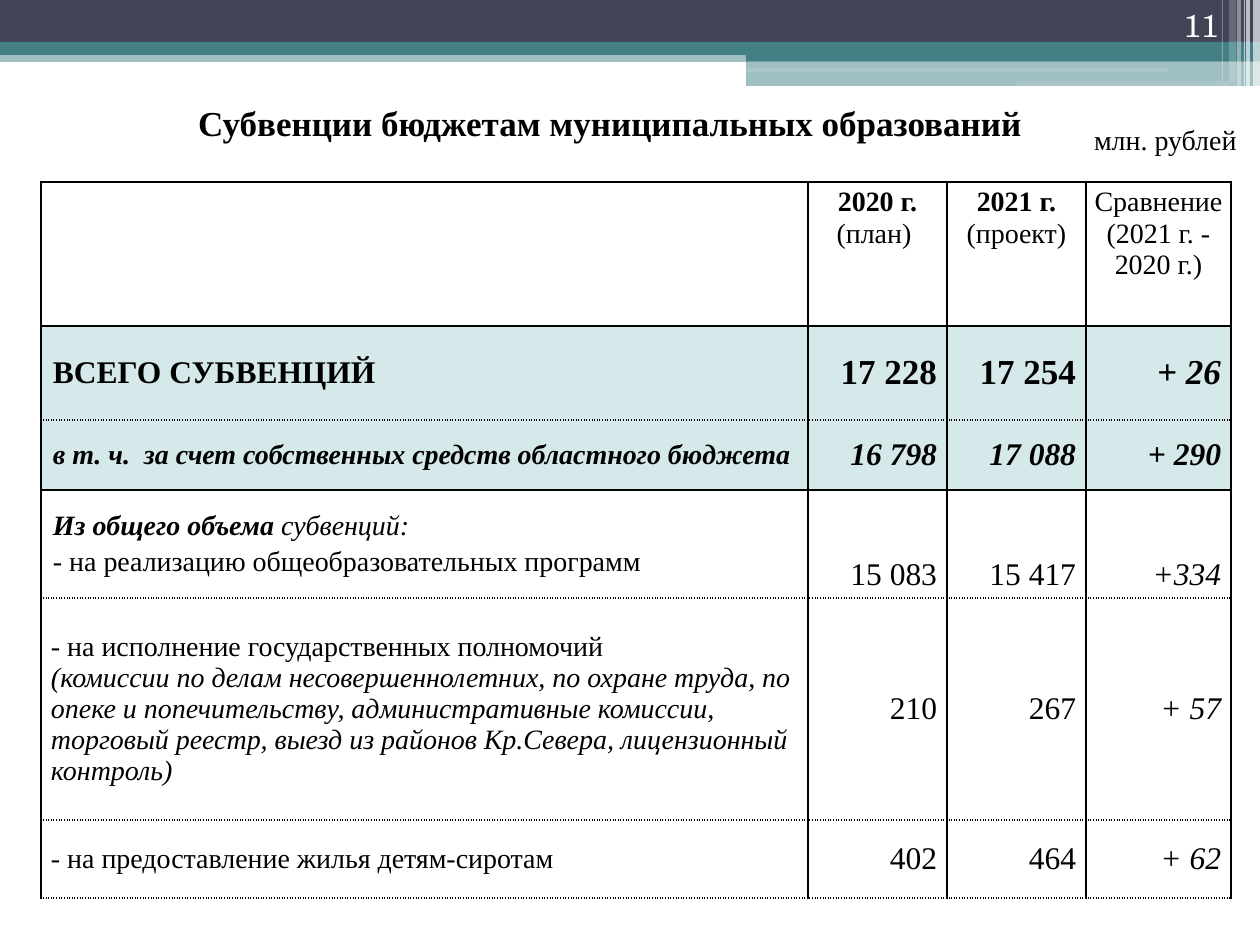
from lxml import etree
from pptx import Presentation
from pptx.dml.color import RGBColor
from pptx.enum.shapes import MSO_SHAPE
from pptx.enum.text import MSO_ANCHOR, PP_ALIGN
from pptx.oxml.ns import qn
from pptx.util import Pt

RECT, ROUND = MSO_SHAPE.RECTANGLE, MSO_SHAPE.ROUNDED_RECTANGLE
TOP, MID, LOW = MSO_ANCHOR.TOP, MSO_ANCHOR.MIDDLE, MSO_ANCHOR.BOTTOM
LEFT, MIDST, RIGHT = PP_ALIGN.LEFT, PP_ALIGN.CENTER, PP_ALIGN.RIGHT

SCALE = 914400 / 126
SERIF = "Times New Roman"
HUES = {"ink": "000000", "white": "FFFFFF", "navy": "424456",
        "teal": "438086", "pale": "D6E9EA"}

BARS = [
    (RECT, (0, 50, 1260, 12), "teal", 50),
    (RECT, (0, 0, 1260, 42), "navy", 100),
    (RECT, (0, 42, 1260, 13), "teal", 100),
    (RECT, (746, 49, 514, 12), "teal", 100),
    (RECT, (746, 61, 514, 25), "teal", 50),
    (ROUND, (745, 68, 422, 4), "white", 11),
    (ROUND, (1016, 81, 220, 5), "white", 11),
    (RECT, (1253, 0, 7, 86), "white", 65),
    (RECT, (1246, 0, 4, 86), "white", 65),
    (RECT, (1244, 0, 1, 86), "white", 60),
    (RECT, (1237, 0, 4, 86), "white", 40),
    (RECT, (1229, 0, 7, 81), "white", 20),
    (RECT, (1222, 0, 1, 81), "white", 30),
]

COLS = [767, 139, 139, 145]
ROWS = [144, 94, 70, 108, 222, 78]
RULES = ["solid", "solid", "sysDot", "solid", "sysDot", "sysDot", "sysDot"]

HEADS = [
    [],
    [[("2020 г. ", "b"), ("(план) ", "")]],
    [[("2021 г.", "b")], [("(проект)", "")]],
    [[("Сравнение (2021 г. -", "")], [("2020 г.)", "")]],
]

BODY = [
    ([[("ВСЕГО СУБВЕНЦИЙ", "b")]],
     ["17 228", "17 254", "+ 26"], ["b", "b", "bi"], (18, 20), "pale", MID, 12),
    ([[("в т. ч.  за счет собственных средств областного бюджета", "bi")]],
     ["16 798", "17 088", "+ 290"], ["bi", "bi", "bi"], (16, 18), "pale", MID, 12),
    ([[("Из общего объема ", "bi"), ("субвенций:", "i")],
      [("- на реализацию общеобразовательных программ", "")]],
     ["15 083", "15 417", "+334"], ["", "", "i"], (16, 18), "white", LOW, 12),
    ([[("- на исполнение государственных полномочий", "")],
      [("(комиссии по делам несовершеннолетних, по охране труда, по опеке и "
         "попечительству, административные комиссии, торговый реестр, выезд "
         "из районов Кр.Севера, лицензионный контроль)", "i")]],
     ["210", "267", "+ 57"], ["", "", "i"], (16, 18), "white", MID, 10),
    ([[("- на предоставление жилья детям-сиротам", "")]],
     ["402", "464", "+ 62"], ["", "", "i"], (16, 18), "white", MID, 10),
]


def px(count):
    return round(count * SCALE)


def hue(name):
    return RGBColor.from_string(HUES[name])


def style(run, size, mode="", tint="ink", face=SERIF):
    font = run.font
    font.name, font.size = face, Pt(size)
    font.bold, font.italic = "b" in mode, "i" in mode
    font.color.rgb = hue(tint)


def add_bar(slide, kind, box, tint, alpha):
    bar = slide.shapes.add_shape(kind, *map(px, box))
    bar.shadow.inherit = False
    bar.line.fill.background()
    bar.fill.solid()
    bar.fill.fore_color.rgb = hue(tint)
    if alpha < 100:
        color = next(bar._element.iter(qn("a:srgbClr")))
        etree.SubElement(color, qn("a:alpha"), val=str(alpha * 1000))


def add_label(slide, text, box, size, anchor, tint="ink", face=SERIF):
    frame = slide.shapes.add_textbox(*map(px, box)).text_frame
    frame.word_wrap = True
    frame.vertical_anchor = anchor
    frame.text = text
    para = frame.paragraphs[0]
    para.alignment = RIGHT
    style(para.runs[0], size, tint=tint, face=face)


def set_title(slide, text):
    title = slide.shapes.title
    title.left, title.top, title.width, title.height = map(px, (-20, 89, 1260, 67))
    frame = title.text_frame
    frame.text = text
    frame.vertical_anchor = MID
    para = frame.paragraphs[0]
    para.alignment = MIDST
    style(para.runs[0], 20, "b")


def set_edges(cell, upper, lower):
    props = cell._tc.get_or_add_tcPr()
    sides = [("L", "solid"), ("R", "solid"), ("T", upper), ("B", lower)]
    for spot, (side, dash) in enumerate(sides):
        line = etree.Element(qn("a:ln" + side), w=str(Pt(1)))
        fill = etree.SubElement(line, qn("a:solidFill"))
        etree.SubElement(fill, qn("a:srgbClr"), val=HUES["ink"])
        etree.SubElement(line, qn("a:prstDash"), val=dash)
        props.insert(spot, line)


def fill_cell(cell, paras, size, align, anchor, tint, pads, gap=0):
    cell.fill.solid()
    cell.fill.fore_color.rgb = hue(tint)
    cell.vertical_anchor = anchor
    (cell.margin_left, cell.margin_top,
     cell.margin_right, cell.margin_bottom) = map(px, pads)
    frame = cell.text_frame
    for spot, parts in enumerate(paras):
        para = frame.add_paragraph() if spot else frame.paragraphs[0]
        para.alignment = align
        para.space_before = Pt(gap if spot else 0)
        for text, mode in parts:
            run = para.add_run()
            run.text = text
            style(run, size, mode)


def add_grid(slide):
    box = (41, 182, sum(COLS), sum(ROWS))
    grid = slide.shapes.add_table(len(ROWS), len(COLS), *map(px, box)).table
    grid.first_row = grid.horz_banding = False
    for col, width in zip(grid.columns, COLS):
        col.width = px(width)
    for row, height in zip(grid.rows, ROWS):
        row.height = px(height)
    for col, paras in enumerate(HEADS):
        fill_cell(grid.cell(0, col), paras, 16, MIDST, TOP, "white", (5, 5, 5, 5))
    for row, (name, sums, modes, sizes, tint, anchor, pad) in enumerate(BODY, 1):
        gap = 3 if anchor == LOW else 0
        fill_cell(grid.cell(row, 0), name, sizes[0], LEFT, MID, tint,
                  (pad, 6, 12, 6), gap)
        for col, part in enumerate(zip(sums, modes), 1):
            fill_cell(grid.cell(row, col), [[part]], sizes[1], RIGHT, anchor,
                      tint, (12, 6, 10, 6))
    for row in range(len(ROWS)):
        for col in range(len(COLS)):
            set_edges(grid.cell(row, col), RULES[row], RULES[row + 1])


def main():
    deck = Presentation()
    deck.slide_width, deck.slide_height = px(1260), px(945)
    slide = deck.slides.add_slide(deck.slide_layouts[5])
    for bar in BARS:
        add_bar(slide, *bar)
    set_title(slide, "Субвенции бюджетам муниципальных образований")
    add_grid(slide)
    add_label(slide, "11", (1126, 0, 105, 50), 18, LOW, "white", "TeX Gyre Schola")
    add_label(slide, "млн. рублей", (1032, 116, 217, 47), 16, TOP)
    deck.save("out.pptx")


if __name__ == "__main__":
    main()
